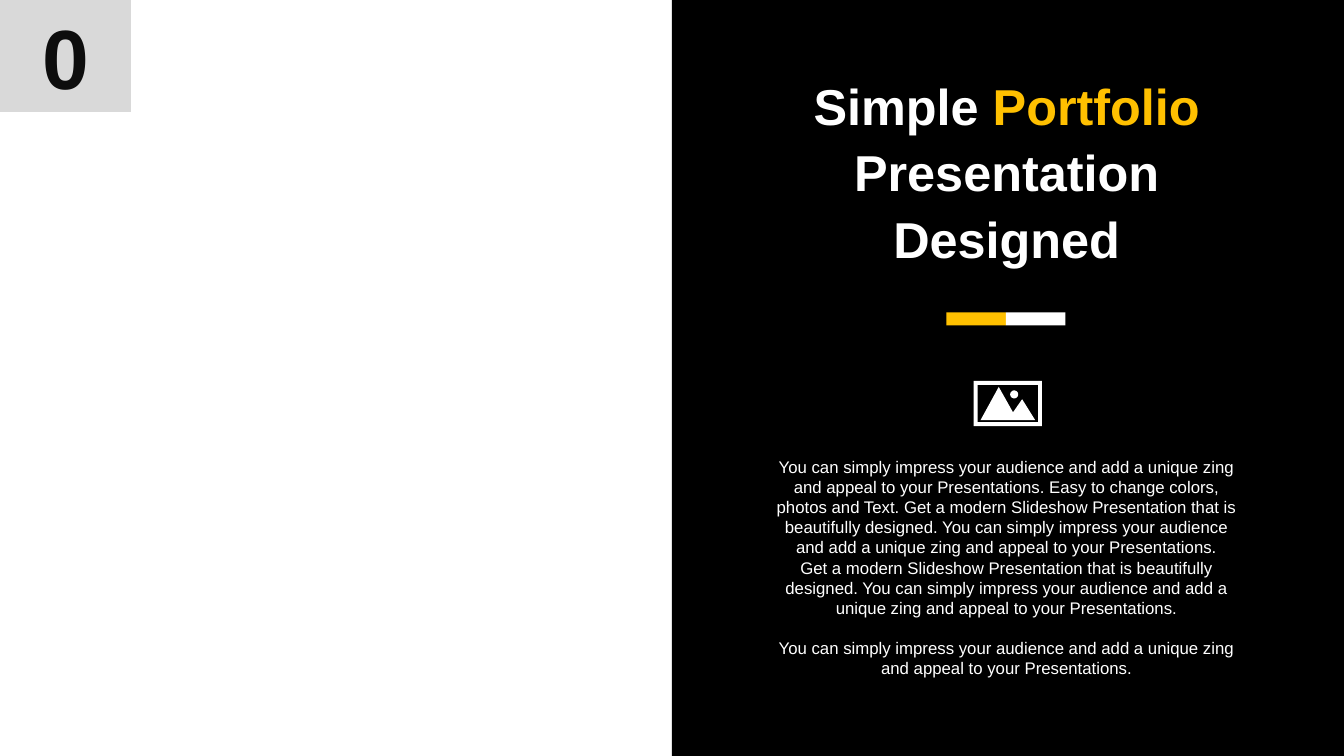
"""Build the portfolio slide with a black text panel on the right."""
from dataclasses import dataclass
from math import cos, pi, sin

from pptx import Presentation
from pptx.dml.color import RGBColor
from pptx.enum.shapes import MSO_SHAPE as Preset
from pptx.enum.text import MSO_ANCHOR as Anchor, PP_ALIGN as Align
from pptx.util import Cm, Pt


@dataclass(frozen=True)
class Theme:
    """Colours, font and type sizes of the slide."""
    black: str = "000000"
    white: str = "FFFFFF"
    accent: str = "FFC000"
    badge: str = "D9D9D9"
    ink: str = "0D0D0D"
    font: str = "Arial"
    number_size: int = 60
    title_size: int = 36
    body_size: int = 12


THEME = Theme()
WIDTH, HEIGHT = 33.87, 19.05
HALF = WIDTH / 2

PITCH = ("You can simply impress your audience and add a unique zing "
         "and appeal to your Presentations.")
DESIGN = "Get a modern Slideshow Presentation that is beautifully designed."
BODY = (f"{PITCH} Easy to change colors, photos and Text. {DESIGN} {PITCH}",
        f"{DESIGN} {PITCH}")


def paint(shape, color):
    """Give a shape a flat fill without line or shadow."""
    shape.shadow.inherit = False
    shape.fill.solid()
    shape.fill.fore_color.rgb = RGBColor.from_string(color)
    shape.line.fill.background()


def add_block(page, left, top, width, height, color):
    """Add a plain filled rectangle."""
    block = page.shapes.add_shape(
        Preset.RECTANGLE, Cm(left), Cm(top), Cm(width), Cm(height))
    paint(block, color)
    return block


def add_box(page, left, top, width, height, anchor=Anchor.TOP):
    """Add a wrapping text box and return its text frame."""
    box = page.shapes.add_textbox(Cm(left), Cm(top), Cm(width), Cm(height))
    box.text_frame.word_wrap = True
    box.text_frame.vertical_anchor = anchor
    return box.text_frame


def write(para, text, *, size, color=THEME.white, bold=False, before=0, spacing=1.0):
    """Append formatted text to a centred paragraph."""
    para.alignment = Align.CENTER
    para.space_before = Pt(before)
    para.line_spacing = spacing
    span = para.add_run()
    span.text = text
    span.font.name = THEME.font
    span.font.size = Pt(size)
    span.font.bold = bold
    span.font.color.rgb = RGBColor.from_string(color)


def add_badge(page):
    """Add the grey number badge in the corner."""
    frame = add_block(page, 0, 0, 3.3, 2.82, THEME.badge).text_frame
    frame.vertical_anchor = Anchor.TOP
    frame.margin_left = frame.margin_right = Cm(0.3)
    frame.margin_top = frame.margin_bottom = Cm(0.13)
    write(frame.paragraphs[0], "0", size=THEME.number_size,
          color=THEME.ink, bold=True)


def add_title(page):
    """Add the heading with its accented word."""
    frame = add_box(page, 19.91, 1.52, 10.92, 5.46, Anchor.MIDDLE)
    for text, color in (("Simple ", THEME.white), ("Portfolio ", THEME.accent),
                        ("Presentation Designed", THEME.white)):
        write(frame.paragraphs[0], text, size=THEME.title_size, color=color,
              bold=True, before=7, spacing=1.1)


def add_body(page):
    """Add the description with a gap above its closing line."""
    frame = add_box(page, 19.3, 11.38, 12.14, 5.89)
    write(frame.paragraphs[0], BODY[0], size=THEME.body_size)
    write(frame.add_paragraph(), BODY[1], size=THEME.body_size)
    write(frame.add_paragraph(), PITCH, size=THEME.body_size, before=14)


def rectangle(left, top, right, bottom):
    """Return the corners of a rectangle."""
    return [(left, top), (right, top), (right, bottom), (left, bottom)]


def circle(x, y, radius, steps=32):
    """Return points around a circle."""
    angles = [2 * pi * step / steps for step in range(steps)]
    return [(x + radius * cos(angle), y + radius * sin(angle)) for angle in angles]


def add_photo_icon(page):
    """Add the framed landscape icon as one outline."""
    frame = rectangle(24.54, 9.6, 26.26, 10.74)
    window = rectangle(24.64, 9.7, 26.16, 10.64)
    mountains = [(25.17, 9.75), (25.53, 10.39), (25.76, 10.06),
                 (26.09, 10.59), (24.71, 10.59)]
    sun = circle(25.56, 9.94, 0.1)
    outlines = [[(Cm(x), Cm(y)) for x, y in outline]
                for outline in (frame, window, mountains, sun)]
    builder = page.shapes.build_freeform(*outlines[0][0])
    for outline in outlines:
        builder.move_to(*outline[0])
        builder.add_line_segments(outline[1:], close=True)
    paint(builder.convert_to_shape(), THEME.white)


def main():
    """Build and save the deck."""
    deck = Presentation()
    deck.slide_width, deck.slide_height = Cm(WIDTH), Cm(HEIGHT)
    page = deck.slides.add_slide(deck.slide_layouts[6])
    add_block(page, HALF, 0, HALF, HEIGHT, THEME.black)
    add_title(page)
    add_body(page)
    for index, color in enumerate((THEME.accent, THEME.white)):
        add_block(page, 23.85 + 1.5 * index, 7.87, 1.5, 0.33, color)
    add_badge(page)
    add_photo_icon(page)
    deck.save("out.pptx")


if __name__ == "__main__":
    main()
